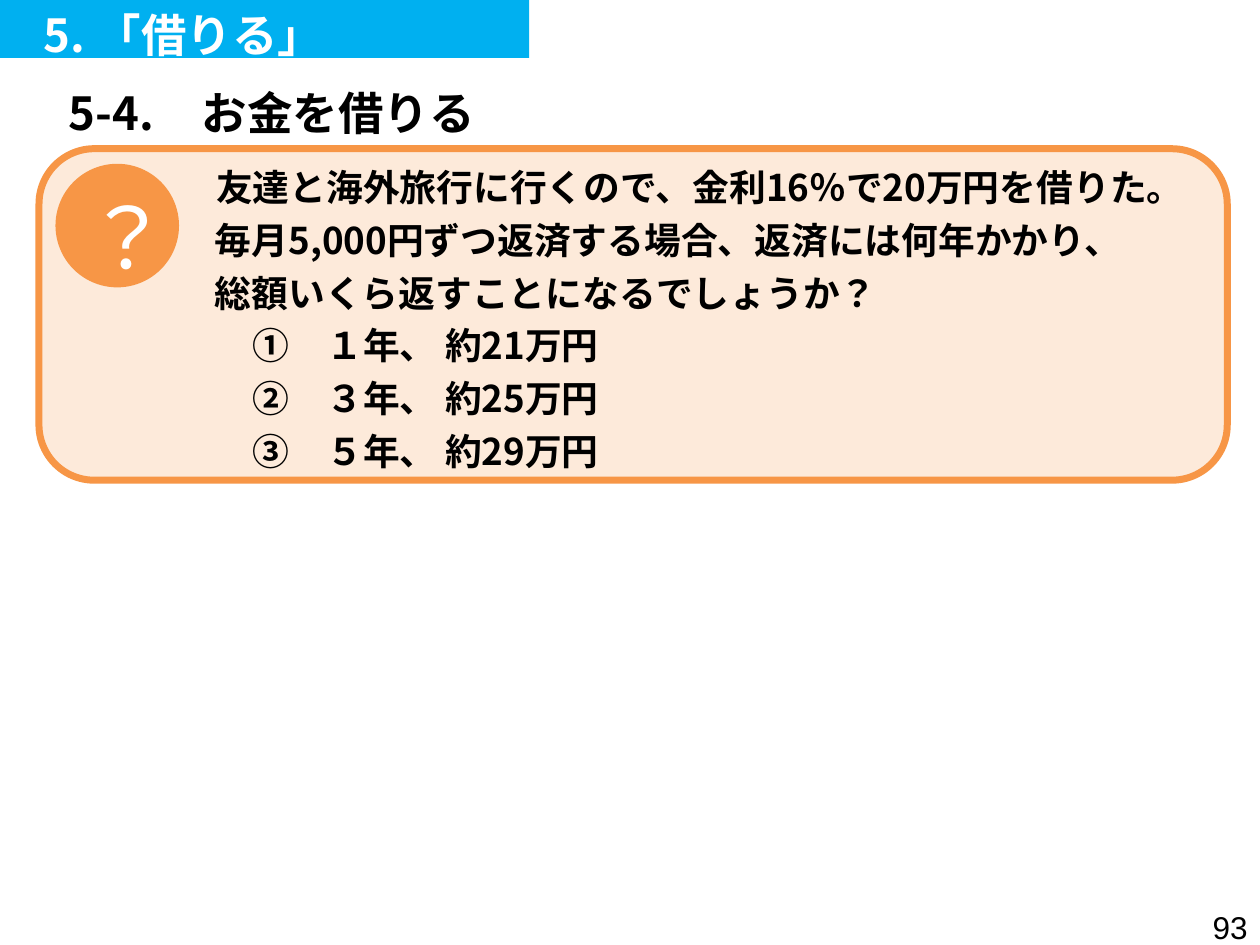
from lxml.etree import SubElement
from pptx import Presentation
from pptx.dml.color import RGBColor
from pptx.enum.lang import MSO_LANGUAGE_ID
from pptx.enum.shapes import MSO_SHAPE
from pptx.enum.text import MSO_ANCHOR, PP_ALIGN
from pptx.oxml.ns import qn
from pptx.util import Pt

BLUE = RGBColor(0x00, 0xB0, 0xF0)
ORANGE = RGBColor(0xF7, 0x96, 0x46)
PEACH = RGBColor(0xFD, 0xEA, 0xDA)
BLACK = RGBColor(0x00, 0x00, 0x00)
WHITE = RGBColor(0xFF, 0xFF, 0xFF)
JAPANESE = "Noto Sans CJK JP"

CHAPTER = [("　", 18, "Calibri"), ("5. 「借りる」", 26, JAPANESE)]
SECTION = [("5-4.", 77, PP_ALIGN.CENTER, 6.5), ("お金を借りる", 189.4, PP_ALIGN.LEFT, 13)]
QUESTION = "友達と海外旅行に行くので、金利16％で20万円を借りた。毎月5,000円ずつ返済する場合、返済には何年かかり、 総額いくら返すことになるでしょうか？"
CHOICES = [("①", "１年", "約21万円"), ("②", "３年", "約25万円"), ("③", "５年", "約29万円")]
PAGE_NUMBER = "93"


def add_run(paragraph, text, size, color, bold=False, font=JAPANESE):
    run = paragraph.add_run()
    run.text = text
    run.font.size = Pt(size)
    run.font.bold = bold
    run.font.color.rgb = color
    run.font.name = font
    SubElement(run.font._element, qn("a:ea")).set("typeface", font)
    return run


def set_paragraph(paragraph, align, spacing=0):
    paragraph.alignment = align
    paragraph.line_spacing = 1.2
    paragraph.space_before = paragraph.space_after = Pt(spacing)


def add_panel(slide, kind, left, top, width, height, fill, line=None):
    panel = slide.shapes.add_shape(kind, Pt(left), Pt(top), Pt(width), Pt(height))
    panel.shadow.inherit = False
    panel.fill.solid()
    panel.fill.fore_color.rgb = fill
    if line:
        panel.line.color.rgb = line
        panel.line.width = Pt(4)
    else:
        panel.line.fill.background()
    panel.text_frame.word_wrap = True
    panel.text_frame.vertical_anchor = MSO_ANCHOR.MIDDLE
    return panel.text_frame


def add_section(slide):
    total = sum(width for _, width, _, _ in SECTION)
    table = slide.shapes.add_table(1, len(SECTION), Pt(25.2), Pt(33.1), Pt(total), Pt(49)).table
    table.first_row = table.horz_banding = False
    for index, (text, width, align, inset) in enumerate(SECTION):
        table.columns[index].width = Pt(width)
        cell = table.cell(0, index)
        cell.fill.background()
        cell.vertical_anchor = MSO_ANCHOR.MIDDLE
        cell.margin_left, cell.margin_right = Pt(inset), Pt(6.5)
        paragraph = cell.text_frame.paragraphs[0]
        set_paragraph(paragraph, align)
        add_run(paragraph, text, 26, BLACK, True)


def add_chapter(slide):
    frame = add_panel(slide, MSO_SHAPE.RECTANGLE, 0, 0, 302.4, 33.1, BLUE)
    paragraph = frame.paragraphs[0]
    set_paragraph(paragraph, PP_ALIGN.LEFT, 5.2)
    for text, size, font in CHAPTER:
        add_run(paragraph, text, size, WHITE, True, font)


def add_question(slide):
    frame = add_panel(slide, MSO_SHAPE.ROUNDED_RECTANGLE, 22.3, 85, 679, 189.4, PEACH, ORANGE)
    frame.margin_right = Pt(29)
    lines = [QUESTION] + [f"　{mark}　{years}、 {total}" for mark, years, total in CHOICES]
    for index, line in enumerate(lines):
        paragraph = frame.add_paragraph() if index else frame.paragraphs[0]
        set_paragraph(paragraph, PP_ALIGN.LEFT)
        properties = paragraph._p.get_or_add_pPr()
        properties.set("marL", str(Pt(84.25)))
        properties.set("indent", str(Pt(0.7)))
        run = add_run(paragraph, line, 21, BLACK, True)
        run.font.language_id = MSO_LANGUAGE_ID.JAPANESE


def add_question_mark(slide):
    frame = add_panel(slide, MSO_SHAPE.OVAL, 31.7, 93.6, 70.6, 70.6, ORANGE)
    set_paragraph(frame.paragraphs[0], PP_ALIGN.CENTER, 9.6)
    add_run(frame.paragraphs[0], "？", 48, WHITE)


def add_page_number(slide):
    frame = slide.shapes.add_textbox(Pt(552.2), Pt(511.2), Pt(167.8), Pt(28.8)).text_frame
    frame.word_wrap = True
    set_paragraph(frame.paragraphs[0], PP_ALIGN.RIGHT, 3.6)
    add_run(frame.paragraphs[0], PAGE_NUMBER, 18, BLACK, font="Arial")


def main():
    deck = Presentation()
    deck.slide_width, deck.slide_height = Pt(720), Pt(540)
    slide = deck.slides.add_slide(deck.slide_layouts[6])
    add_section(slide)
    add_chapter(slide)
    add_question(slide)
    add_question_mark(slide)
    add_page_number(slide)
    deck.save("out.pptx")


if __name__ == "__main__":
    main()
